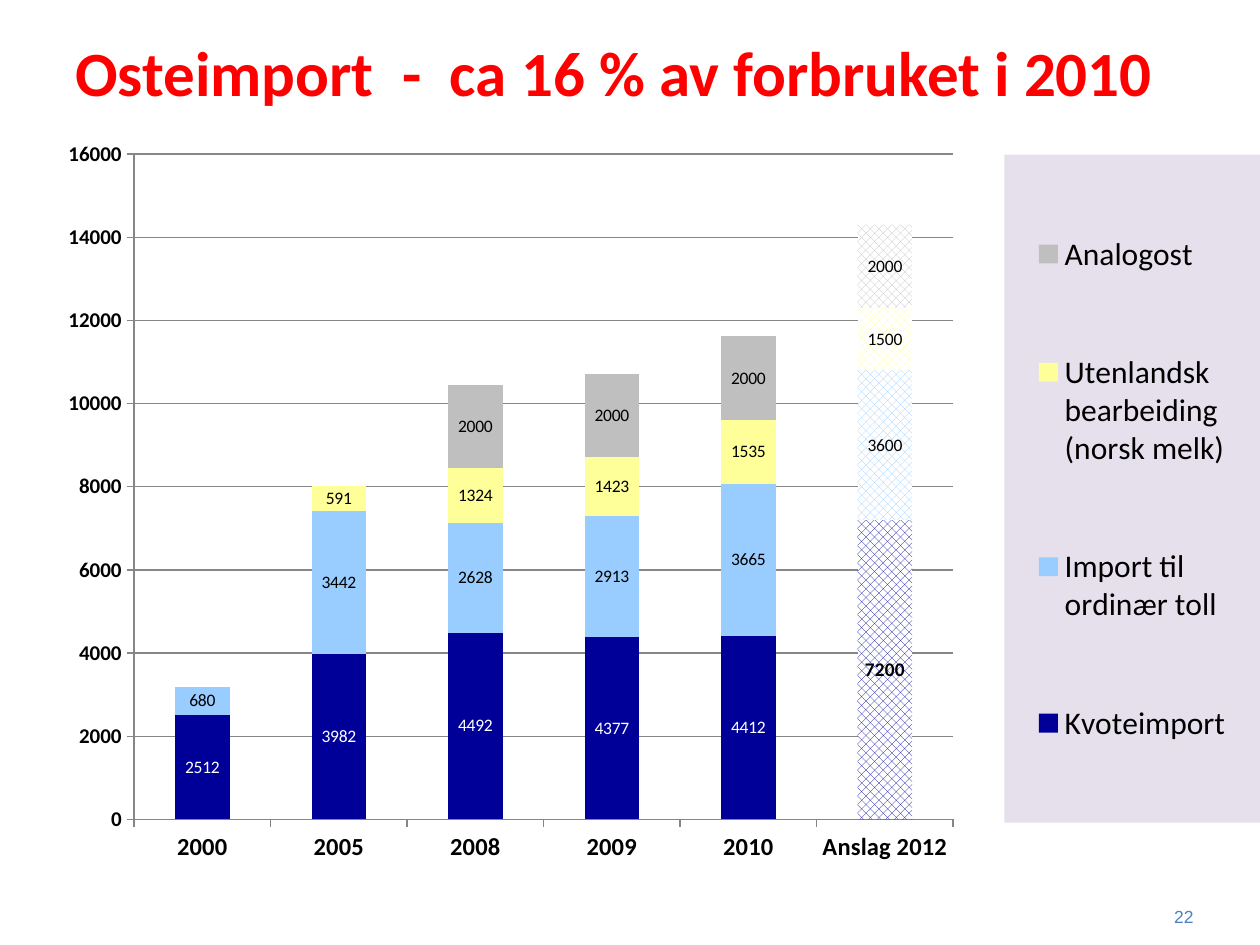
from lxml.etree import SubElement as Sub, Element
from pptx import Presentation
from pptx.chart.data import CategoryChartData as Data
from pptx.dml.color import RGBColor as RGB
from pptx.enum.chart import XL_CHART_TYPE as Kind, XL_LEGEND_POSITION as Side, XL_TICK_MARK as Tick
from pptx.enum.dml import MSO_PATTERN as Pat
from pptx.enum.text import MSO_ANCHOR as Anchor, PP_ALIGN as Align
from pptx.oxml.ns import qn
from pptx.util import Pt

# Content
TITLE = "Osteimport  -  ca 16 % av forbruket i 2010"
NUMBER = "22"
YEARS = ["2000", "2005", "2008", "2009", "2010", "Anslag 2012"]
SERIES = [
    ("Kvoteimport", "navy", "white", [2512, 3982, 4492, 4377, 4412, 7200]),
    ("Import til ordinær toll", "sky", "black", [680, 3442, 2628, 2913, 3665, 3600]),
    ("Utenlandsk bearbeiding (norsk melk)", "yellow", "black",
     [0, 591, 1324, 1423, 1535, 1500]),
    ("Analogost", "grey", "black", [None, None, 2000, 2000, 2000, 2000]),
]
COLORS = {"red": "FF0000", "blue": "4F81BD", "navy": "000099", "sky": "99CCFF",
          "yellow": "FFFF99", "grey": "BFBFBF", "white": "FFFFFF",
          "black": "000000", "line": "868686", "lilac": "E6E0EC"}
PLOT = (0.075, 0.026, 0.673, 0.897)
KEY = (0.79, 0.027, 0.21, 0.9)
LAST = len(YEARS) - 1


def color(name):
    return RGB.from_string(COLORS[name])


def style(font, size, hue="black", bold=False, face="Calibri"):
    font.size, font.bold, font.name = Pt(size), bold, face
    font.color.rgb = color(hue)


def text(slide, words, box, align=Align.LEFT, anchor=Anchor.TOP, **look):
    frame = slide.shapes.add_textbox(*map(Pt, box)).text_frame
    frame.word_wrap, frame.vertical_anchor = True, anchor
    para = frame.paragraphs[0]
    para.alignment = align
    run = para.add_run()
    run.text = words
    style(run.font, **look)


def layout(parent, box, inner=False):
    """Make a manual layout that replaces any layout of the parent."""
    for old in parent.findall(qn("c:layout")):
        parent.remove(old)
    node = Element(qn("c:layout"))
    manual = Sub(node, qn("c:manualLayout"))
    rules = [("layoutTarget", "inner")] if inner else []
    rules += [("xMode", "edge"), ("yMode", "edge"), *zip("xywh", box)]
    for tag, val in rules:
        Sub(manual, qn("c:" + tag)).set("val", str(val))
    return node


prs = Presentation()
prs.slide_width, prs.slide_height = Pt(720), Pt(540)
slide = prs.slides.add_slide(prs.slide_layouts[6])

# Title and slide number
text(slide, TITLE, (36, 9.4, 648, 62.6), anchor=Anchor.MIDDLE,
     size=36, hue="red", bold=True)
text(slide, NUMBER, (632.2, 514, 56.9, 17.3), align=Align.RIGHT,
     size=10, hue="blue", face="Arial")

# Chart
data = Data()
data.categories = YEARS
for name, _, _, vals in SERIES:
    data.add_series(name, vals)
chart = slide.shapes.add_chart(Kind.COLUMN_STACKED, Pt(24.5), Pt(77),
                               Pt(695.5), Pt(424), data).chart
chart.has_title = False
style(chart.font, 10)
plot = chart.plots[0]
plot.gap_width, plot.overlap, plot.vary_by_categories = 150, 100, False

# Series, with a hatched estimate as the last column
for ser, (_, hue, ink, _) in zip(plot.series, SERIES):
    ser.format.fill.solid()
    ser.format.fill.fore_color.rgb = color(hue)
    fill = ser.points[LAST].format.fill
    fill.patterned()
    fill.pattern = Pat.PERCENT_50
    fill.fore_color.rgb, fill.back_color.rgb = color(hue), color("white")
    labels = ser.data_labels
    labels.show_value = True
    labels.number_format, labels.number_format_is_linked = "0;;", False
    style(labels.font, 10, ink)
style(plot.series[0].points[LAST].data_label.font, 11, bold=True)

# Axes
for axis, size in ((chart.category_axis, 14), (chart.value_axis, 12)):
    style(axis.tick_labels.font, size, bold=True)
    axis.major_tick_mark, axis.minor_tick_mark = Tick.OUTSIDE, Tick.NONE
    axis.format.line.color.rgb = color("line")
value = chart.value_axis
value.minimum_scale, value.maximum_scale, value.major_unit = 0, 16000, 2000
value.has_major_gridlines = True
value.major_gridlines.format.line.color.rgb = color("line")

# Legend and plot placement
chart.has_legend = True
legend = chart.legend
legend.position, legend.include_in_layout = Side.RIGHT, False
style(legend.font, 18)
area = chart.element.find(".//" + qn("c:plotArea"))
area.insert(0, layout(area, PLOT, inner=True))
key = chart.element.find(".//" + qn("c:legend"))
cover = key.find(qn("c:overlay"))
cover.addprevious(layout(key, KEY))
back = Element(qn("c:spPr"))
Sub(Sub(back, qn("a:solidFill")), qn("a:srgbClr")).set("val", COLORS["lilac"])
cover.addnext(back)

prs.save("out.pptx")
